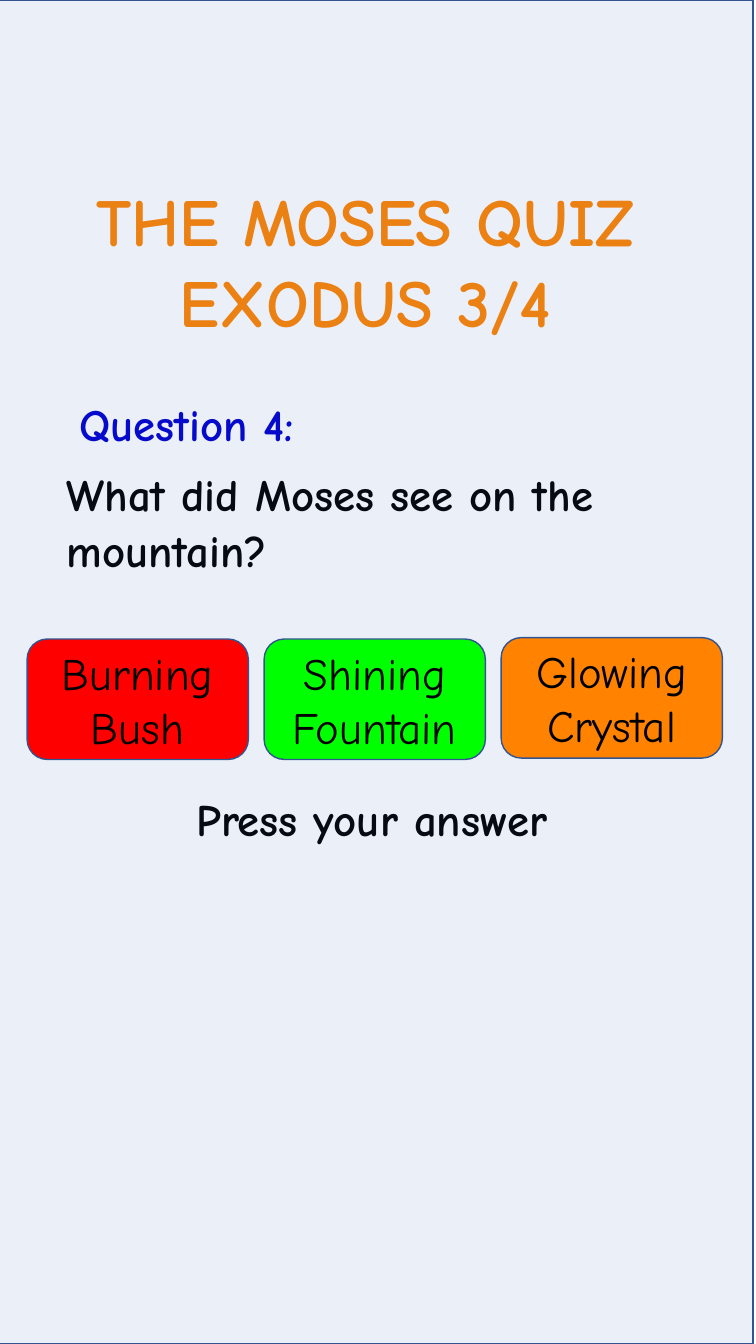
from pptx import Presentation
from pptx.dml.color import RGBColor
from pptx.enum.shapes import MSO_SHAPE
from pptx.enum.text import MSO_ANCHOR, MSO_AUTO_SIZE, PP_ALIGN
from pptx.oxml.xmlchemy import OxmlElement
from pptx.util import Pt

HUES = {"title": "FF8200", "label": "0000CC", "text": "000000",
        "veil": "4472C4", "edge": "325491",
        "red": "FF0000", "green": "00FF00", "orange": "FF8200"}


def write(shape, lines, look, size=32, bold=True, **form):
    """Fill a shape with lines of text in the quiz font."""
    frame = shape.text_frame
    frame.text = "\n".join(lines)
    frame.auto_size = MSO_AUTO_SIZE.NONE
    for para in frame.paragraphs:
        for key, value in form.items():
            setattr(para, key, value)
        font = para.runs[0].font
        font.color.rgb = RGBColor.from_string(HUES[look])
        for key, value in {"name": "Comic Neue", "size": Pt(size), "bold": bold}.items():
            setattr(font, key, value)
    return frame


def paint(shape, hue):
    """Give a shape its fill and thin blue edge."""
    shape.shadow.inherit = False
    shape.fill.solid()
    shape.fill.fore_color.rgb = RGBColor.from_string(HUES[hue])
    shape.line.color.rgb = RGBColor.from_string(HUES["edge"])
    shape.line.width = Pt(1)


deck = Presentation()
deck.slide_width, deck.slide_height = Pt(540), Pt(960)
slide = deck.slides.add_slide(deck.slide_layouts[0])
shapes = slide.shapes
title, quest = slide.placeholders

# Text boxes: shape, left, top, width, height
label = shapes.add_textbox(0, 0, 0, 0)
prompt = shapes.add_textbox(0, 0, 0, 0)
for box, *place in [(title, 21.6, 124.5, 496, 124),
                    (label, 33.8, 280, 199.5, 46),
                    (quest, 40.3, 328.3, 458, 105),
                    (prompt, 133.2, 566, 304, 52)]:
    for key, value in zip(("left", "top", "width", "height"), place):
        setattr(box, key, Pt(value))
    box.text_frame.vertical_anchor = MSO_ANCHOR.TOP

# Wording
mid, left = PP_ALIGN.CENTER, PP_ALIGN.LEFT
write(title, ["THE MOSES QUIZ ", "EXODUS 3/4 "], "title", 48,
      alignment=mid).word_wrap = False
write(label, ["Question 4:"], "label", alignment=mid).word_wrap = False
write(quest, ["What did Moses see on the mountain?"], "text", alignment=left,
      line_spacing=Pt(40), space_before=Pt(7.5)).word_wrap = True
write(prompt, ["Press your answer"], "text", alignment=left,
      line_spacing=0.9, space_before=Pt(7.5)).word_wrap = True

# Pale veil over the whole page
veil = shapes.add_shape(MSO_SHAPE.RECTANGLE, Pt(-2), 0, Pt(540), Pt(960))
paint(veil, "veil")
alpha = OxmlElement("a:alpha")
alpha.set("val", "10000")
veil.fill._xPr.solidFill[0].append(alpha)

# Answer buttons
answers = [("Burning Bush", "red", 456.5), ("Shining Fountain", "green", 456.5),
           ("Glowing Crystal", "orange", 455.5)]
for col, (words, hue, top) in enumerate(answers):
    key = shapes.add_shape(MSO_SHAPE.ROUNDED_RECTANGLE, Pt(19.4 + 169.3 * col),
                           Pt(top), Pt(158), Pt(86))
    paint(key, hue)
    frame = write(key, [words], "text", bold=False, alignment=mid)
    frame.word_wrap = True
    frame.vertical_anchor = MSO_ANCHOR.MIDDLE

deck.save("out.pptx")
